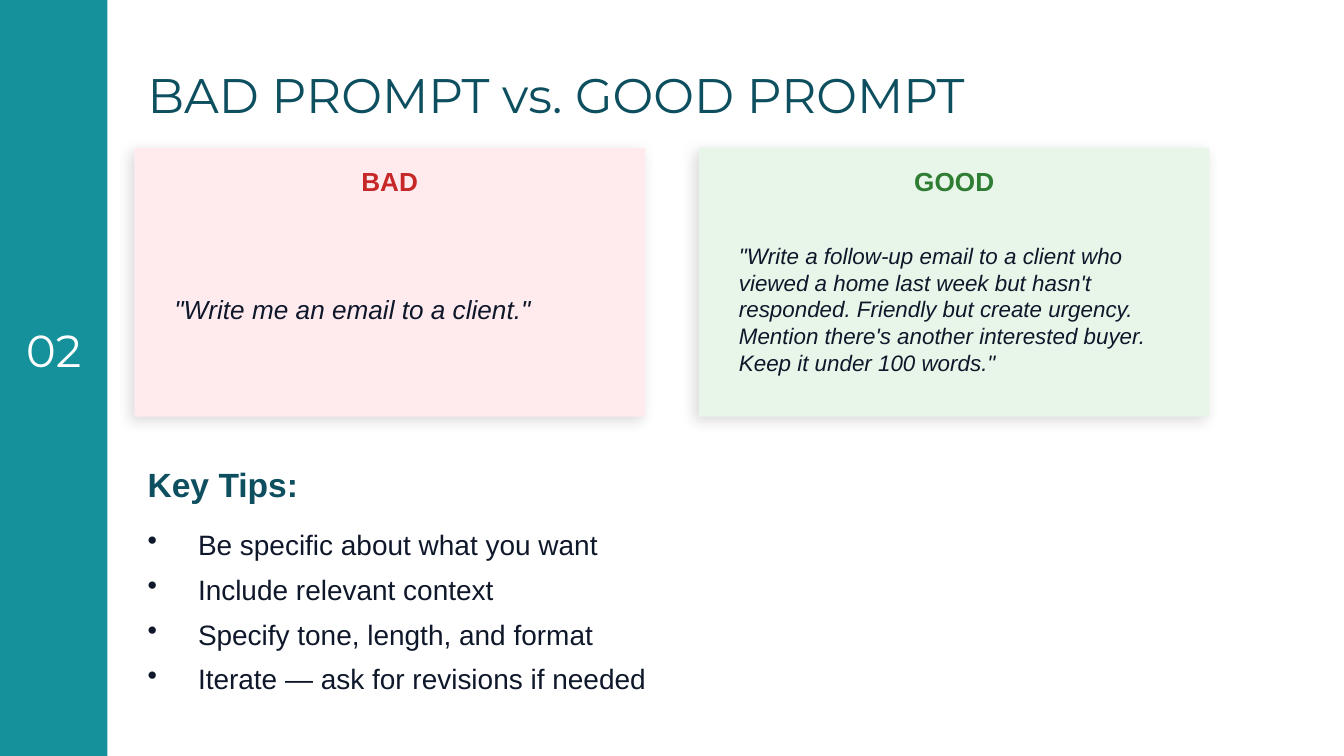
from lxml import etree
from pptx import Presentation
from pptx.dml.color import RGBColor
from pptx.enum.shapes import MSO_SHAPE
from pptx.enum.text import MSO_ANCHOR, PP_ALIGN
from pptx.oxml.ns import qn
from pptx.util import Pt

RECT = MSO_SHAPE.RECTANGLE
MIDDLE = MSO_ANCHOR.MIDDLE
LEFT, CENTER = PP_ALIGN.LEFT, PP_ALIGN.CENTER

COLORS = {
    "teal": "14919B",
    "deep": "0D4F5F",
    "ink": "0F172A",
    "white": "FFFFFF",
    "pink": "FFEBEE",
    "red": "C62828",
    "mint": "E8F5E9",
    "green": "2E7D32",
    "shade": "000000",
}
CARD_TOP, CARD_WIDE, CARD_HIGH = 79.2, 273.6, 144
TIPS = [
    "Be specific about what you want",
    "Include relevant context",
    "Specify tone, length, and format",
    "Iterate — ask for revisions if needed",
]


def color(name):
    """Return the named colour."""
    return RGBColor.from_string(COLORS[name])


def add_rect(slide, x, y, wide, high, fill):
    """Draw a plain filled rectangle."""
    rect = slide.shapes.add_shape(RECT, Pt(x), Pt(y), Pt(wide), Pt(high))
    rect.shadow.inherit = False
    rect.fill.solid()
    rect.fill.fore_color.rgb = color(fill)
    rect.line.fill.background()
    return rect


def add_shadow(shape):
    """Give a shape a soft outer shadow."""
    effects = shape._element.spPr.find(qn("a:effectLst"))
    outer = etree.SubElement(
        effects, qn("a:outerShdw"), blurRad=str(Pt(8)), dist=str(Pt(3)),
        dir=str(135 * 60000), algn="bl", rotWithShape="0")
    tint = etree.SubElement(outer, qn("a:srgbClr"), val=COLORS["shade"])
    etree.SubElement(tint, qn("a:alpha"), val="15000")


def add_bullet(para, indent=27):
    """Give a paragraph a hanging bullet."""
    props = para._p.get_or_add_pPr()
    props.set("marL", str(Pt(indent)))
    props.set("indent", str(-Pt(indent)))
    etree.SubElement(props, qn("a:buSzPct"), val="100000")
    etree.SubElement(props, qn("a:buChar"), char="•")


def add_text(slide, lines, x, y, wide, high, size=14, font="Arial", ink="ink",
             bold=False, italic=False, align=LEFT, bullet=False, after=0):
    """Place a text box with one paragraph per line."""
    box = slide.shapes.add_textbox(Pt(x), Pt(y), Pt(wide), Pt(high))
    frame = box.text_frame
    frame.word_wrap = True
    frame.vertical_anchor = MIDDLE
    for i, line in enumerate(lines):
        para = frame.add_paragraph() if i else frame.paragraphs[0]
        para.alignment = align
        if after:
            para.space_after = Pt(after)
        if bullet:
            add_bullet(para)
        run = para.add_run()
        run.text = line
        run.font.name = font
        run.font.size = Pt(size)
        run.font.bold = bold
        run.font.italic = italic
        run.font.color.rgb = color(ink)


def add_card(slide, x, fill, title, ink, quote, size, top, high):
    """Draw a shadowed card with a heading and a quoted prompt."""
    add_shadow(add_rect(slide, x, CARD_TOP, CARD_WIDE, CARD_HIGH, fill))
    add_text(slide, [title], x, CARD_TOP + 3.6, CARD_WIDE, 28.8,
             ink=ink, bold=True, align=CENTER)
    add_text(slide, [quote], x + 14.4, top, CARD_WIDE - 28.8, high,
             size=size, italic=True)


def main():
    """Build the slide and save it."""
    deck = Presentation()
    deck.slide_width, deck.slide_height = Pt(720), Pt(405)
    slide = deck.slides.add_slide(deck.slide_layouts[6])

    add_rect(slide, 0, 0, 57.6, 405, "teal")
    add_text(slide, ["02"], 0, 165.6, 57.6, 43.2, size=24,
             font="Montserrat", ink="white", align=CENTER)
    add_text(slide, ["BAD PROMPT vs. GOOD PROMPT"], 72, 28.8, 612, 43.2,
             size=26, font="Montserrat", ink="deep")

    add_card(slide, 72, "pink", "BAD", "red",
             '"Write me an email to a client."', 14, 115.2, 100.8)
    add_card(slide, 374.4, "mint", "GOOD", "green",
             '"Write a follow-up email to a client who viewed a home last '
             "week but hasn't responded. Friendly but create urgency. "
             "Mention there's another interested buyer. "
             'Keep it under 100 words."', 12, 111.6, 108)

    add_text(slide, ["Key Tips:"], 72, 244.8, 576, 28.8, size=18,
             ink="deep", bold=True)
    add_text(slide, TIPS, 72, 273.6, 576, 108, size=15, bullet=True, after=6)
    deck.save("out.pptx")


if __name__ == "__main__":
    main()
